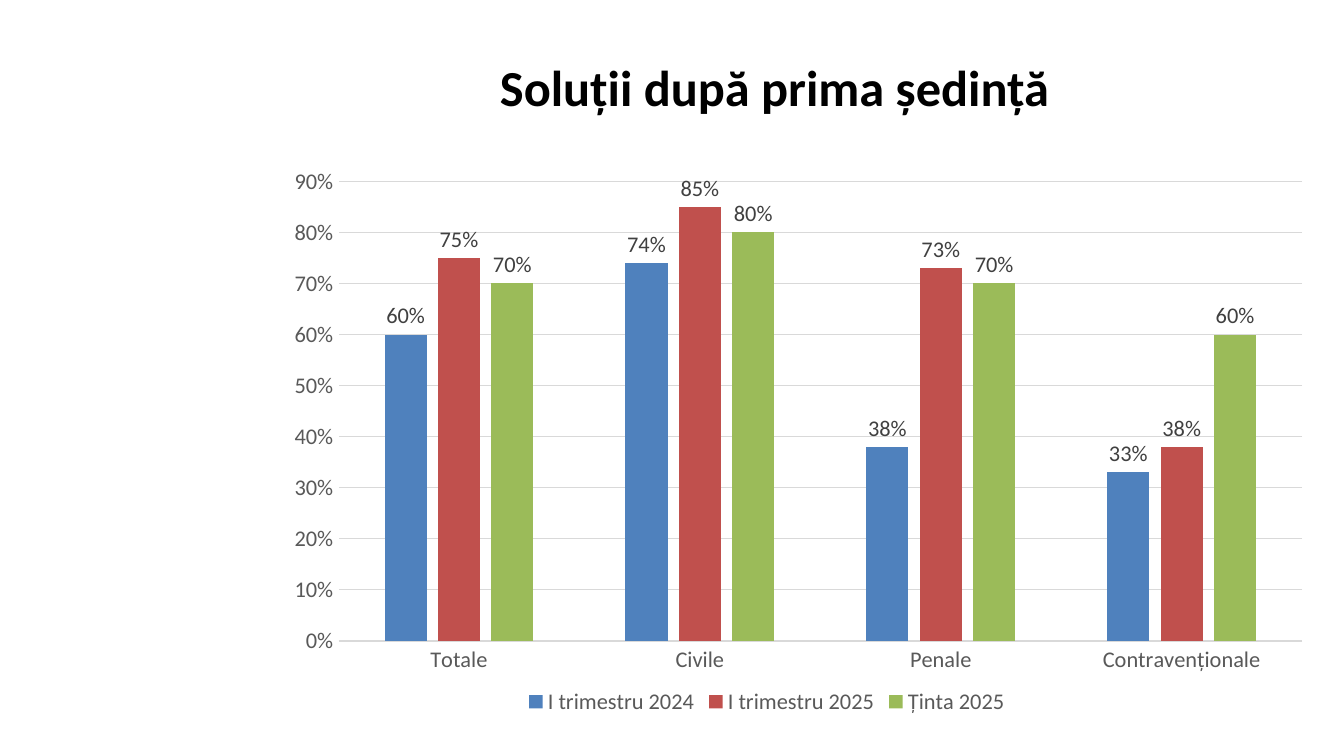
from dataclasses import dataclass

from lxml import etree
from pptx import Presentation
from pptx.chart.data import CategoryChartData
from pptx.dml.color import RGBColor
from pptx.enum.chart import XL_CHART_TYPE, XL_LABEL_POSITION, XL_LEGEND_POSITION, XL_TICK_MARK
from pptx.enum.text import MSO_ANCHOR, PP_ALIGN
from pptx.oxml.ns import qn
from pptx.slide import Slide
from pptx.util import Pt

BLACK = RGBColor(0x00, 0x00, 0x00)
WHITE = RGBColor(0xFF, 0xFF, 0xFF)
AXIS_GREY = RGBColor(0x59, 0x59, 0x59)
LABEL_GREY = RGBColor(0x40, 0x40, 0x40)
GRID_GREY = RGBColor(0xD9, 0xD9, 0xD9)
BLUE = RGBColor(0x4F, 0x81, 0xBD)
RED = RGBColor(0xC0, 0x50, 0x4D)
GREEN = RGBColor(0x9B, 0xBB, 0x59)

COLUMNS = XL_CHART_TYPE.COLUMN_CLUSTERED
OUTSIDE_END = XL_LABEL_POSITION.OUTSIDE_END
BOTTOM = XL_LEGEND_POSITION.BOTTOM
NO_TICK = XL_TICK_MARK.NONE
MIDDLE = MSO_ANCHOR.MIDDLE
CENTER = PP_ALIGN.CENTER

TITLE_ONLY = 5
PERCENT = "0%"
CATEGORIES = ["Totale", "Civile", "Penale", "Contravenționale"]
PERIODS = [
    ("I trimestru 2024", BLUE, [0.60, 0.74, 0.38, 0.33]),
    ("I trimestru 2025", RED, [0.75, 0.85, 0.73, 0.38]),
    ("Ținta 2025", GREEN, [0.70, 0.80, 0.70, 0.60]),
]


@dataclass
class SlideBuilder:
    slide: Slide
    font_name: str = "Calibri"
    title_size: float = 27
    chart_size: float = 12

    def style(self, font, size, color, bold=False):
        font.name = self.font_name
        font.size = Pt(size)
        font.bold = bold
        font.color.rgb = color

    def background(self, color):
        fill = self.slide.background.fill
        fill.solid()
        fill.fore_color.rgb = color

    def title(self, text, left, top, width, height):
        heading = self.slide.shapes.title
        heading.left, heading.top = Pt(left), Pt(top)
        heading.width, heading.height = Pt(width), Pt(height)
        frame = heading.text_frame
        frame.word_wrap = True
        frame.vertical_anchor = MIDDLE
        paragraph = frame.paragraphs[0]
        paragraph.alignment = CENTER
        run = paragraph.add_run()
        run.text = text
        self.style(run.font, self.title_size, BLACK, bold=True)

    def grid_line(self, line):
        line.color.rgb = GRID_GREY
        line.width = Pt(0.75)

    def axis(self, axis):
        axis.major_tick_mark = NO_TICK
        axis.minor_tick_mark = NO_TICK
        self.style(axis.tick_labels.font, self.chart_size, AXIS_GREY)

    def plot_area(self, chart, x, y, w, h):
        area = chart._chartSpace.chart.plotArea
        for automatic in area.findall(qn("c:layout")):
            area.remove(automatic)
        layout = etree.Element(qn("c:layout"))
        area.insert(0, layout)
        manual = etree.SubElement(layout, qn("c:manualLayout"))
        settings = [("layoutTarget", "inner"), ("xMode", "edge"), ("yMode", "edge"),
                    ("x", x), ("y", y), ("w", w), ("h", h)]
        for tag, value in settings:
            etree.SubElement(manual, qn(f"c:{tag}")).set("val", str(value))

    def column_chart(self, categories, groups, left, top, width, height):
        data = CategoryChartData(number_format=PERCENT)
        data.categories = categories
        for name, _, values in groups:
            data.add_series(name, values)
        chart = self.slide.shapes.add_chart(
            COLUMNS, Pt(left), Pt(top), Pt(width), Pt(height), data).chart
        self.style(chart.font, 10, BLACK)
        chart.has_title = False

        self.axis(chart.category_axis)
        self.grid_line(chart.category_axis.format.line)
        values_axis = chart.value_axis
        self.axis(values_axis)
        values_axis.minimum_scale, values_axis.maximum_scale = 0, 0.9
        values_axis.major_unit = 0.1
        values_axis.tick_labels.number_format = PERCENT
        values_axis.tick_labels.number_format_is_linked = False
        values_axis.format.line.fill.background()
        self.grid_line(values_axis.major_gridlines.format.line)

        chart.has_legend = True
        chart.legend.position = BOTTOM
        chart.legend.include_in_layout = False
        self.style(chart.legend.font, self.chart_size, AXIS_GREY)

        columns = chart.plots[0]
        columns.gap_width = 219
        columns.overlap = -27
        columns.vary_by_categories = False
        for series, (_, color, _) in zip(columns.series, groups):
            series.format.fill.solid()
            series.format.fill.fore_color.rgb = color
            series.invert_if_negative = False
            labels = series.data_labels
            labels.show_value = True
            labels.position = OUTSIDE_END
            labels.number_format = PERCENT
            labels.number_format_is_linked = False
            self.style(labels.font, self.chart_size, LABEL_GREY)
        return chart


def main():
    presentation = Presentation()
    presentation.slide_width, presentation.slide_height = Pt(720), Pt(405)
    builder = SlideBuilder(
        presentation.slides.add_slide(presentation.slide_layouts[TITLE_ONLY]))
    builder.background(WHITE)
    builder.title("Soluții după prima ședință", 162, 28, 506, 37)
    solutions = builder.column_chart(CATEGORIES, PERIODS, 124, 82, 574, 304)
    builder.plot_area(solutions, 0.1, 0.05, 0.9, 0.81)
    presentation.save("out.pptx")


if __name__ == "__main__":
    main()
